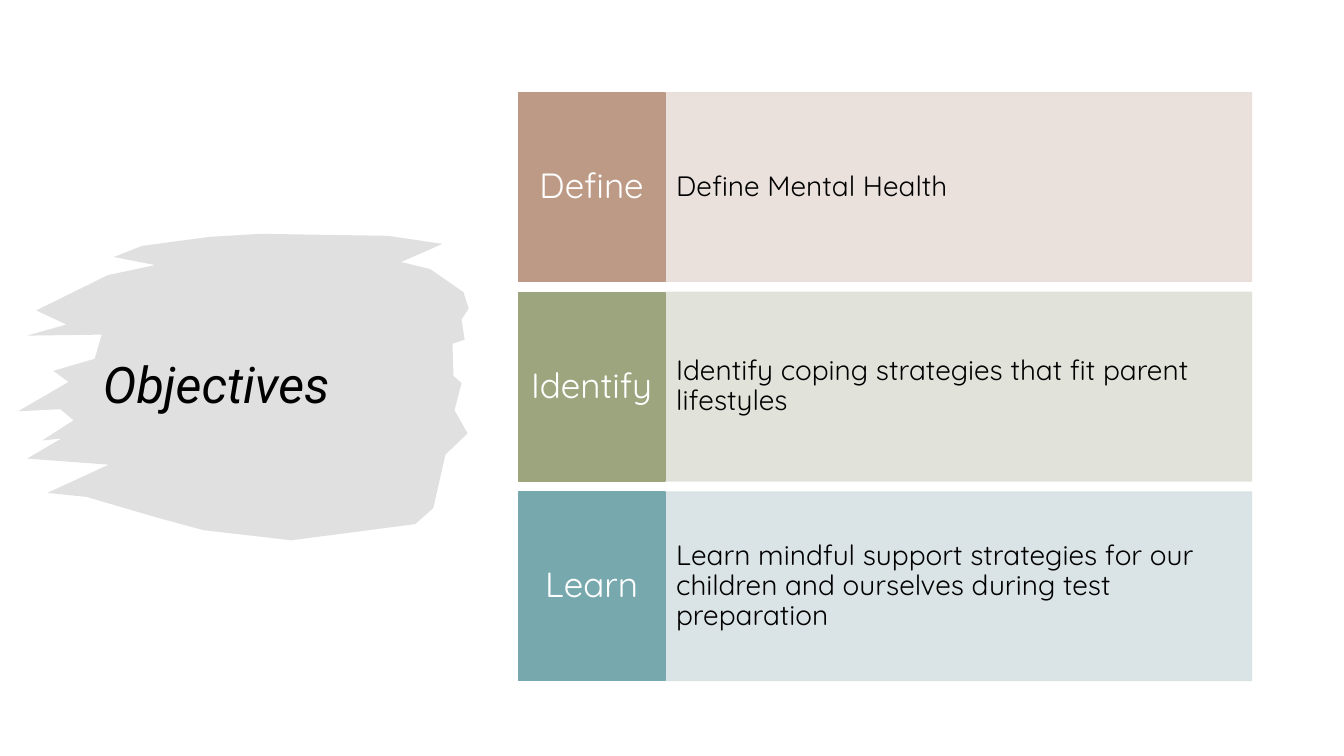
"""Build the Objectives slide: a brush-stroke title beside three labelled rows."""
from lxml.etree import SubElement
from pptx import Presentation
from pptx.dml.color import RGBColor
from pptx.enum.shapes import MSO_SHAPE
from pptx.enum.text import MSO_ANCHOR, MSO_AUTO_SIZE, PP_ALIGN
from pptx.oxml.ns import qn
from pptx.util import Cm, Pt

TITLE = "Objectives"
ROWS = [
    ("Define", "Define Mental Health", "BD9A85", "E8DED9"),
    ("Identify", "Identify coping strategies that fit parent lifestyles", "9CA57D", "DEE1D7"),
    ("Learn", "Learn mindful support strategies for our children and ourselves "
              "during test preparation", "77A8AE", "D6E1E3"),
]
UNIT = Cm(0.0254)
BRUSH = [
    (259, 232), (385, 234), (439, 242), (398, 260), (427, 267), (460, 290), (465, 306),
    (458, 317), (461, 337), (449, 341), (450, 373), (458, 380), (451, 407), (464, 430),
    (442, 451), (430, 504), (412, 520), (289, 536), (202, 526), (154, 513), (86, 493),
    (47, 489), (108, 461), (27, 455), (61, 435), (42, 437), (73, 417), (60, 406),
    (18, 408), (44, 393), (68, 379), (53, 368), (94, 356), (101, 332), (27, 333),
    (66, 322), (36, 308), (107, 273), (154, 263), (113, 255), (141, 244), (208, 235),
]
LEFT, TOP, HIGH, STEP = 13.06, 2.34, 4.75, 5.03
TAG, WIDE = 3.7, 14.78


def rgb(code):
    return RGBColor.from_string(code)


def paint(shape, code, alpha=100, edge=True):
    shape.shadow.inherit = False
    shape.fill.solid()
    shape.fill.fore_color.rgb = rgb(code)
    if edge:
        shape.line.color.rgb = rgb(code)
        shape.line.width = Pt(1)
    else:
        shape.line.fill.background()
    if alpha < 100:
        for tint in shape.element.spPr.iter(qn("a:srgbClr")):
            SubElement(tint, qn("a:alpha")).set("val", str(alpha * 1000))


def write(shape, text, font, size, code, align=PP_ALIGN.LEFT):
    frame = shape.text_frame
    frame.text = text
    frame.word_wrap = True
    frame.auto_size = MSO_AUTO_SIZE.NONE
    frame.vertical_anchor = MSO_ANCHOR.MIDDLE
    para = frame.paragraphs[0]
    para.alignment = align
    para.line_spacing = 0.9
    para.font.name = font
    para.font.size = Pt(size)
    para.font.color.rgb = rgb(code)
    return frame


def box(slide, left, top, width, code, alpha=100):
    shape = slide.shapes.add_shape(
        MSO_SHAPE.RECTANGLE, Cm(left), Cm(top), Cm(width), Cm(HIGH))
    paint(shape, code, alpha)
    return shape


def main():
    deck = Presentation()
    deck.slide_width, deck.slide_height = Cm(33.87), Cm(19.05)
    slide = deck.slides.add_slide(deck.slide_layouts[5])

    title = slide.shapes.title
    title.left, title.top, title.width, title.height = Cm(2.34), Cm(4.17), Cm(8.94), Cm(11.18)
    head = write(title, TITLE, "Roboto", 36, "000000")
    head.paragraphs[0].font.italic = True

    edge = slide.shapes.build_freeform(*BRUSH[0], scale=UNIT)
    edge.add_line_segments(BRUSH[1:], close=True)
    brush = edge.convert_to_shape()
    paint(brush, "D9D9D9", 80, edge=False)
    title.element.addprevious(brush.element)

    for row, (label, text, dark, light) in enumerate(ROWS):
        top = TOP + row * STEP
        body = box(slide, LEFT + TAG, top, WIDE, light, 90)
        frame = write(body, text, "Quicksand", 20, "000000")
        frame.margin_left = frame.margin_right = Cm(0.28)
        tag = box(slide, LEFT, top, TAG, dark)
        frame = write(tag, label, "Quicksand", 25, "FFFFFF", PP_ALIGN.CENTER)
        frame.margin_left = frame.margin_right = Cm(0.2)

    deck.save("out.pptx")


if __name__ == "__main__":
    main()
